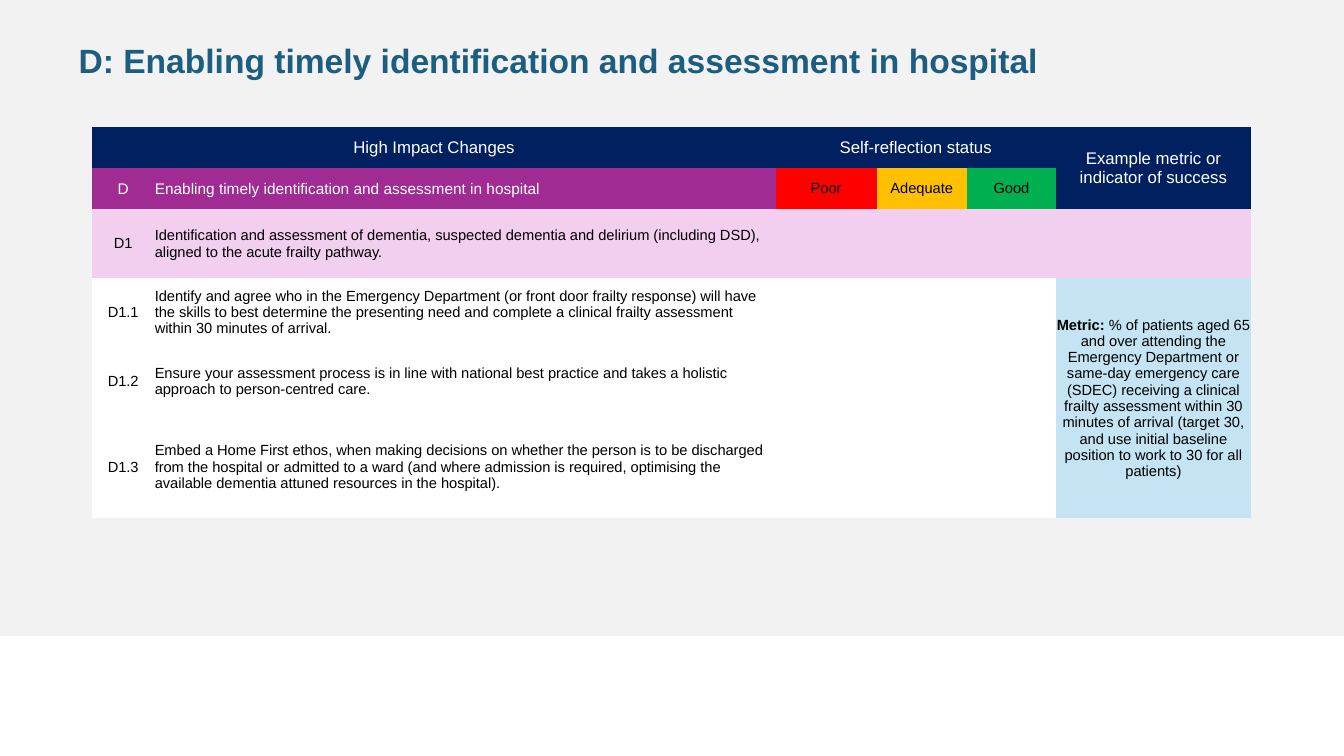
from dataclasses import dataclass

from pptx import Presentation
from pptx.dml.color import RGBColor
from pptx.enum.shapes import MSO_SHAPE
from pptx.enum.text import MSO_ANCHOR, PP_ALIGN
from pptx.util import Cm, Pt


@dataclass(frozen=True)
class Theme:
    font: str = "Arial"
    panel: str = "F2F2F2"
    title: str = "1B5E7F"
    navy: str = "002060"
    purple: str = "A02B93"
    pink: str = "F2CEEF"
    sky: str = "C4E3F3"
    red: str = "FF0000"
    amber: str = "FFC000"
    green: str = "00B050"
    white: str = "FFFFFF"
    black: str = "000000"
    title_size: float = 24
    header_size: float = 12
    section_size: float = 11
    body_size: float = 10.5


THEME = Theme()
NO_STYLE_NO_GRID = "{2D5ABB26-0587-4C30-8999-92F81FD0307C}"
COL_WIDTHS = (1.55, 15.67, 2.54, 2.28, 2.24, 4.92)
ROW_HEIGHTS = (1.03, 1.03, 1.73, 1.73, 1.73, 2.6)
METRIC_COL = len(COL_WIDTHS) - 1

TITLE = "Enabling timely identification and assessment in hospital"
RATINGS = (("Poor", THEME.red), ("Adequate", THEME.amber), ("Good", THEME.green))
CHANGES = (
    ("D1", "Identification and assessment of dementia, suspected dementia and "
           "delirium (including DSD), aligned to the acute frailty pathway."),
    ("D1.1", "Identify and agree who in the Emergency Department (or front door "
             "frailty response) will have the skills to best determine the "
             "presenting need and complete a clinical frailty assessment within "
             "30 minutes of arrival."),
    ("D1.2", "Ensure your assessment process is in line with national best "
             "practice and takes a holistic approach to person-centred care."),
    ("D1.3", "Embed a Home First ethos, when making decisions on whether the "
             "person is to be discharged from the hospital or admitted to a ward "
             "(and where admission is required, optimising the available dementia "
             "attuned resources in the hospital)."),
)
METRIC = ("% of patients aged 65 and over attending the Emergency Department or "
          "same-day emergency care (SDEC) receiving a clinical frailty assessment "
          "within 30 minutes of arrival (target 30, and use initial baseline "
          "position to work to 30 for all patients)")


def format_run(r, size, color, bold=False):
    r.font.name = THEME.font
    r.font.size = Pt(size)
    r.font.bold = bold
    r.font.color.rgb = RGBColor.from_string(color)


def add_panel(s, width):
    sp = s.shapes.add_shape(MSO_SHAPE.RECTANGLE, 0, 0, width, Cm(16.03))
    sp.shadow.inherit = False
    sp.fill.solid()
    sp.fill.fore_color.rgb = RGBColor.from_string(THEME.panel)
    sp.line.fill.background()


def add_title(s, text):
    tf = s.shapes.add_textbox(Cm(1.73), Cm(0.77), Cm(30.4), Cm(1.3)).text_frame
    tf.word_wrap = True
    p = tf.paragraphs[0]
    p.text = text
    p.line_spacing = Pt(32)
    format_run(p.runs[0], THEME.title_size, THEME.title, bold=True)


def add_plain_table(s):
    """Add a table with no borders or banding and tight white cells."""
    frame = s.shapes.add_table(len(ROW_HEIGHTS), len(COL_WIDTHS), Cm(2.33), Cm(3.2),
                               Cm(sum(COL_WIDTHS)), Cm(sum(ROW_HEIGHTS)))
    table = frame.table
    table.first_row = table.horz_banding = False
    table._tbl.tblPr[0].text = NO_STYLE_NO_GRID
    for col, width in zip(table.columns, COL_WIDTHS):
        col.width = Cm(width)
    for row, height in zip(table.rows, ROW_HEIGHTS):
        row.height = Cm(height)
    for cell in table.iter_cells():
        cell.margin_left = cell.margin_right = cell.margin_top = Cm(0.02)
        cell.margin_bottom = 0
        cell.vertical_anchor = MSO_ANCHOR.MIDDLE
        fill_cell(cell, THEME.white)
    return table


def fill_cell(cell, color):
    cell.fill.solid()
    cell.fill.fore_color.rgb = RGBColor.from_string(color)


def write_cell(cell, text, fill, size=THEME.body_size, color=THEME.black,
               align=PP_ALIGN.CENTER, lead=""):
    """Fill a cell and write its text, after an optional bold lead-in."""
    fill_cell(cell, fill)
    p = cell.text_frame.paragraphs[0]
    p.alignment = align
    if lead:
        r = p.add_run()
        r.text = lead
        format_run(r, size, color, bold=True)
    r = p.add_run()
    r.text = text
    format_run(r, size, color)


def write_header(table):
    headings = (("High Impact Changes", 0, 0, 1),
                ("Self-reflection status", 2, 0, 4),
                ("Example metric or indicator of success", METRIC_COL, 1, METRIC_COL))
    for text, first_col, last_row, last_col in headings:
        cell = table.cell(0, first_col)
        cell.merge(table.cell(last_row, last_col))
        write_cell(cell, text, THEME.navy, THEME.header_size, THEME.white)


def write_section(table):
    for col, (text, align) in enumerate((("D", PP_ALIGN.CENTER), (TITLE, PP_ALIGN.LEFT))):
        write_cell(table.cell(1, col), text, THEME.purple, THEME.section_size,
                   THEME.white, align)
    for col, (rating, fill) in enumerate(RATINGS, start=2):
        write_cell(table.cell(1, col), rating, fill)


def write_changes(table):
    for col in range(len(COL_WIDTHS)):
        fill_cell(table.cell(2, col), THEME.pink)
    for row, (code, text) in enumerate(CHANGES, start=2):
        fill = THEME.pink if row == 2 else THEME.white
        write_cell(table.cell(row, 0), code, fill)
        write_cell(table.cell(row, 1), text, fill, align=PP_ALIGN.LEFT)
    metric = table.cell(3, METRIC_COL)
    metric.merge(table.cell(len(ROW_HEIGHTS) - 1, METRIC_COL))
    write_cell(metric, METRIC, THEME.sky, lead="Metric: ")


def main():
    prs = Presentation()
    prs.slide_width, prs.slide_height = Cm(33.87), Cm(19.05)
    s = prs.slides.add_slide(prs.slide_layouts[6])
    add_panel(s, prs.slide_width)
    add_title(s, f"D: {TITLE}")
    table = add_plain_table(s)
    write_header(table)
    write_section(table)
    write_changes(table)
    prs.save("out.pptx")


if __name__ == "__main__":
    main()
